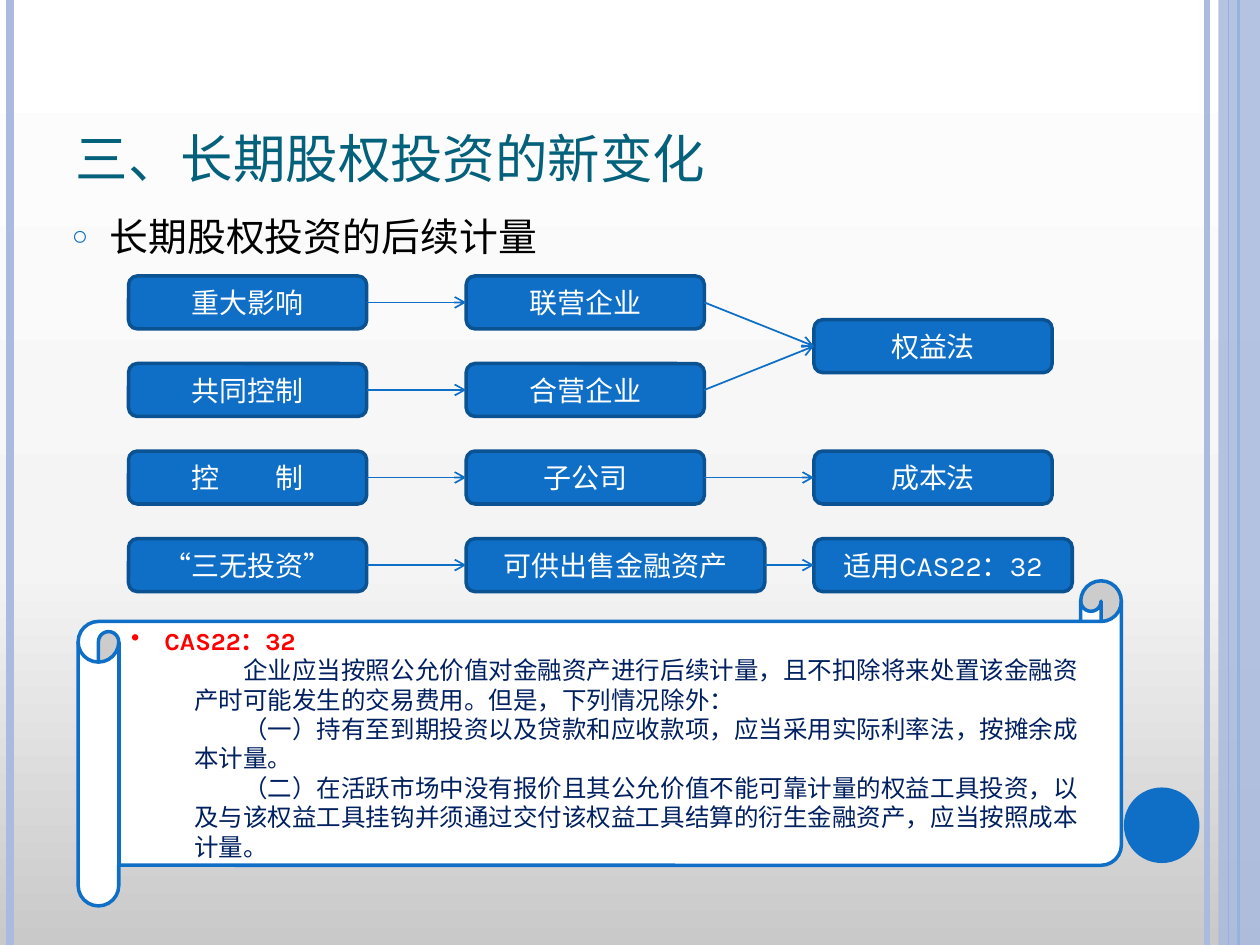
from copy import deepcopy

from lxml import etree
from pptx import Presentation
from pptx import util as u
from pptx.dml.color import RGBColor
from pptx.enum import shapes, text
from pptx.oxml.ns import qn

BLUE, DARK_BLUE, LAVENDER, WHITE = "0F6FC6", "0B5292", "ABBBDF", "FFFFFF"


def paint(target, color, fill=True):
    if fill:
        target.solid()
        target = target.fore_color
    target.rgb = RGBColor.from_string(color)


def add_line(parent, ends, color, width):
    line = parent.add_connector(shapes.MSO_CONNECTOR.STRAIGHT, *map(u.Inches, ends))
    paint(line.line.fill, color)
    line.line.width = u.Pt(width)
    etree.SubElement(line.element.spPr, qn("a:effectLst"))
    return line


presentation = Presentation()
presentation.slide_width, presentation.slide_height = u.Inches(10), u.Inches(7.5)
slide = presentation.slides.add_slide(presentation.slide_layouts[1])

background = slide.background.fill
background.gradient()
background.gradient_angle = 90
stop_list = slide.background._cSld.find(".//" + qn("a:gsLst"))
stop_list.append(deepcopy(stop_list[-1]))
for stop, (position, color) in zip(
    background.gradient_stops, [(0, "C9C9C9"), (0.4, "F4F4F4"), (1, WHITE)]
):
    stop.position = position
    paint(stop.color, color, fill=False)

for x, color, width in [(9.58, LAVENDER, 3), (0.08, LAVENDER, 4.5), (9.83, BLUE, 1.5), (9.75, BLUE, 0.75)]:
    add_line(slide.shapes, (x, 0, x, 7.5), color, width)

decorations = [
    (shapes.MSO_SHAPE.RECTANGLE, (9.67, 0, 0.33, 7.5), LAVENDER, 87),
    (shapes.MSO_SHAPE.OVAL, (8.92, 6.25, 0.6, 0.6), BLUE, 100),
]
for kind, box, color, opacity in decorations:
    shape = slide.shapes.add_shape(kind, *map(u.Inches, box))
    shape.shadow.inherit = False
    paint(shape.fill, color)
    shape.line.fill.background()
    if opacity < 100:
        color_node = shape.element.spPr.find(".//" + qn("a:srgbClr"))
        etree.SubElement(color_node, qn("a:alpha"), val=str(opacity * 1000))

headings = [
    (slide.shapes.title, (0.5, 0.3, 8.17, 1.25), "三、长期股权投资的新变化", 30, "04617B"),
    (slide.placeholders[1], (0.47, 1.64, 8.17, 0.44), "长期股权投资的后续计量", 22.2, "000000"),
]
for shape, box, wording, size, color in headings:
    shape.left, shape.top, shape.width, shape.height = map(u.Inches, box)
    frame = shape.text_frame
    frame.text = wording
    frame.auto_size = text.MSO_AUTO_SIZE.NONE
    paragraph = frame.paragraphs[0]
    paragraph.alignment = text.PP_ALIGN.LEFT
    paragraph.font.name, paragraph.font.size = "Karla", u.Pt(size)
    paint(paragraph.font.fill, color)
slide.shapes.title.text_frame.vertical_anchor = text.MSO_ANCHOR.BOTTOM
paragraph.space_before = u.Pt(6)
properties = paragraph._p.get_or_add_pPr()
properties.set("marL", str(u.Inches(0.3)))
properties.set("indent", str(u.Inches(-0.3)))
bullet_color = etree.SubElement(properties, qn("a:buClr"))
etree.SubElement(bullet_color, qn("a:srgbClr"), val=BLUE)
etree.SubElement(properties, qn("a:buSzPct"), val="70000")
etree.SubElement(properties, qn("a:buChar"), char="○")

columns = [1.02, 3.7, 6.46]
first_row, row_step = 2.19, 0.695
box_width, box_height = 1.89, 0.42
steps = [
    ("重大影响", 0, 0, box_width),
    ("共同控制", 0, 1, box_width),
    ("控　　制", 0, 2, box_width),
    ("“三无投资”", 0, 3, box_width),
    ("联营企业", 1, 0, box_width),
    ("合营企业", 1, 1, box_width),
    ("子公司", 1, 2, box_width),
    ("可供出售金融资产", 1, 3, 2.37),
    ("权益法", 2, 0.5, box_width),
    ("成本法", 2, 2, box_width),
    ("适用CAS22：32", 2, 3, 2.05),
]
flow = slide.shapes.add_group_shape().shapes
boxes = {}
for wording, column, row, width in steps:
    box = (columns[column], first_row + row * row_step, width, box_height)
    shape = flow.add_shape(shapes.MSO_SHAPE.ROUNDED_RECTANGLE, *map(u.Inches, box))
    shape.shadow.inherit = False
    paint(shape.fill, BLUE)
    paint(shape.line.fill, DARK_BLUE)
    shape.line.width = u.Pt(2)
    shape.text_frame.text = wording
    shape.text_frame.vertical_anchor = text.MSO_ANCHOR.MIDDLE
    paragraph = shape.text_frame.paragraphs[0]
    paragraph.alignment = text.PP_ALIGN.CENTER
    paragraph.font.name, paragraph.font.size = "Karla", u.Pt(16)
    paint(paragraph.font.fill, WHITE)
    boxes[column, row] = shape

links = [((0, row), (1, row)) for row in range(4)]
links += [((1, row), (2, 0.5 if row < 2 else row)) for row in range(4)]
for start, end in links:
    arrow = add_line(flow, (0, 0, 0, 0), BLUE, 1)
    arrow.begin_connect(boxes[start], 3)
    arrow.end_connect(boxes[end], 1)
    etree.SubElement(arrow.line._get_or_add_ln(), qn("a:tailEnd"), type="arrow")

scroll = slide.shapes.add_shape(
    shapes.MSO_SHAPE.HORIZONTAL_SCROLL, *map(u.Inches, (0.62, 4.61, 8.28, 2.58))
)
scroll.shadow.inherit = False
paint(scroll.fill, WHITE)
paint(scroll.line.fill, BLUE)
scroll.line.width = u.Pt(2)
frame = scroll.text_frame
frame.vertical_anchor = text.MSO_ANCHOR.MIDDLE
frame.text = "\n".join([
    "　CAS22：32",
    "　　企业应当按照公允价值对金融资产进行后续计量，且不扣除将来处置该金融资产时可能发生的交易费用。但是，下列情况除外：",
    "　　（一）持有至到期投资以及贷款和应收款项，应当采用实际利率法，按摊余成本计量。",
    "　　（二）在活跃市场中没有报价且其公允价值不能可靠计量的权益工具投资，以及与该权益工具挂钩并须通过交付该权益工具结算的衍生金融资产，应当按照成本计量。",
])
for index, paragraph in enumerate(frame.paragraphs):
    paragraph.alignment = text.PP_ALIGN.LEFT
    paragraph.font.size = u.Pt(14)
    paragraph.font.bold = index == 0
    paragraph.font.name = "Arial" if index else "Karla"
    paint(paragraph.font.fill, "002060" if index else "FF0000")
    properties = paragraph._p.get_or_add_pPr()
    if index:
        paragraph.level = 1
        properties.set("marL", str(u.Inches(0.5)))
        properties.set("indent", "0")
    else:
        properties.insert(0, properties.makeelement(qn("a:buChar"), char="•"))

presentation.save("out.pptx")
